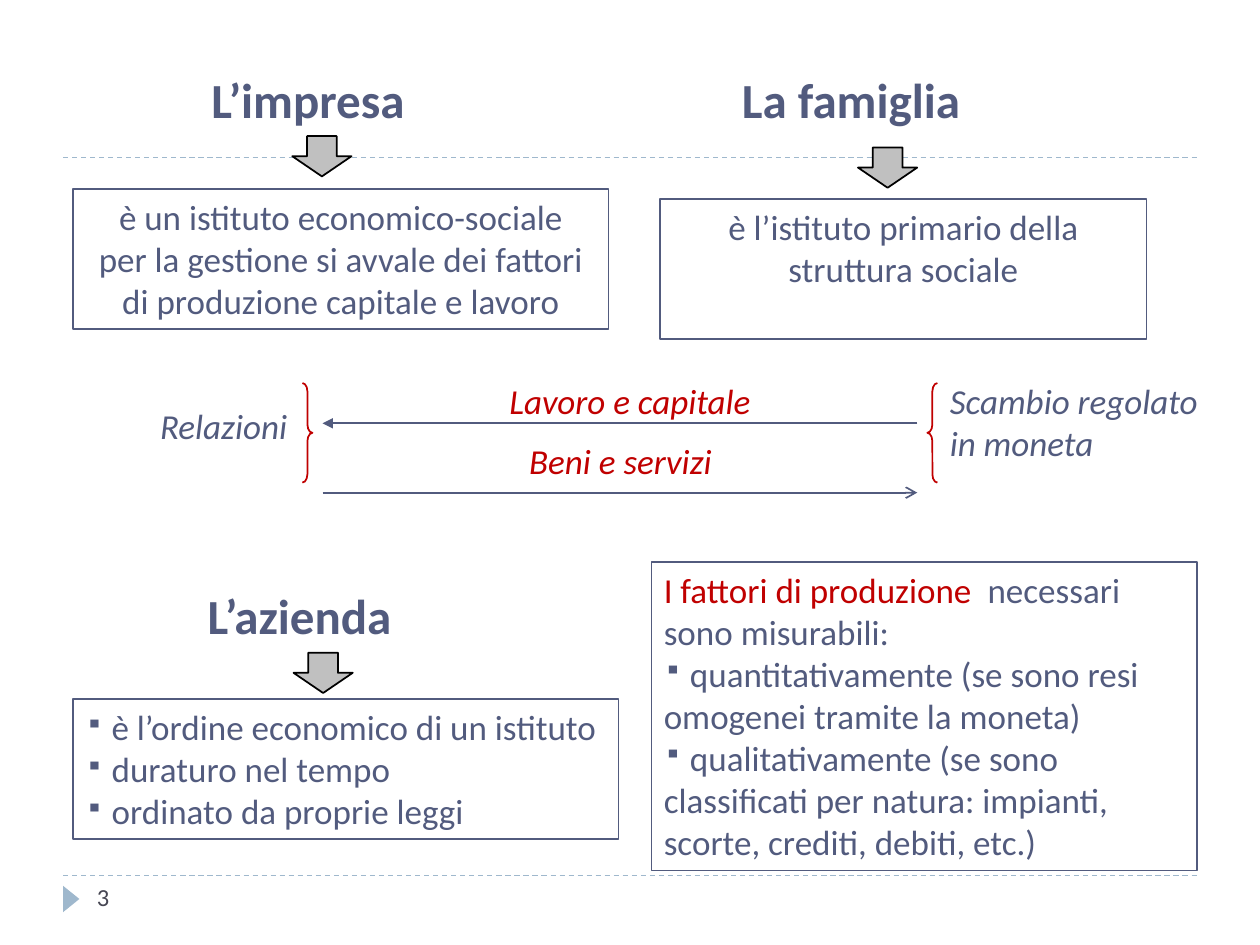
from dataclasses import dataclass

from lxml import etree
from pptx import Presentation
from pptx.dml.color import RGBColor
from pptx.enum.dml import MSO_LINE
from pptx.enum.shapes import MSO_CONNECTOR, MSO_SHAPE
from pptx.enum.text import MSO_ANCHOR, PP_ALIGN
from pptx.oxml.ns import qn
from pptx.util import Inches, Pt

RECT, DOWN_ARROW = MSO_SHAPE.RECTANGLE, MSO_SHAPE.DOWN_ARROW
LEFT_BRACE, RIGHT_BRACE = MSO_SHAPE.LEFT_BRACE, MSO_SHAPE.RIGHT_BRACE
TRIANGLE = MSO_SHAPE.ISOSCELES_TRIANGLE
STRAIGHT, DASH = MSO_CONNECTOR.STRAIGHT, MSO_LINE.DASH
LEFT, CENTER, TOP = PP_ALIGN.LEFT, PP_ALIGN.CENTER, MSO_ANCHOR.TOP
COLS, ROWS = 100, 75


@dataclass(frozen=True)
class Theme:
    font: str = "Calibri"
    ink: str = "525B7E"
    accent: str = "C00000"
    rule: str = "9FB8CD"
    gray: str = "C0C0C0"
    black: str = "000000"
    number: str = "464653"
    heading: int = 28
    body: int = 20
    small: int = 14


class SlideBuilder:
    """Draws on one slide; places are (left, top, width, height) in grid units."""

    def __init__(self, prs, theme):
        self.theme = theme
        self.slide = prs.slides.add_slide(prs.slide_layouts[6])
        self.col, self.row = prs.slide_width / COLS, prs.slide_height / ROWS

    def place(self, x, y):
        return round(x * self.col), round(y * self.row)

    def shape(self, kind, at, fill=None, line=None, adjust=None):
        sp = self.slide.shapes.add_shape(kind, *self.place(*at[:2]), *self.place(*at[2:]))
        sp.shadow.inherit = False
        if adjust is not None:
            sp.adjustments[0] = adjust
        if fill:
            sp.fill.solid()
            sp.fill.fore_color.rgb = RGBColor.from_string(fill)
        else:
            sp.fill.background()
        if line:
            sp.line.color.rgb = RGBColor.from_string(line)
            sp.line.width = Pt(1)
        else:
            sp.line.fill.background()
        return sp

    def set_text(self, sp, paragraphs, size, color, align=LEFT, bold=False, italic=False):
        """Fill a shape; a paragraph starting with a bullet sign becomes a list item,
        and one given as a tuple has its first part in the accent colour."""
        tf = sp.text_frame
        tf.word_wrap, tf.vertical_anchor = True, TOP
        for i, content in enumerate(paragraphs):
            p = tf.add_paragraph() if i else tf.paragraphs[0]
            p.alignment = align
            p.font.name, p.font.size = self.theme.font, Pt(size)
            p.font.bold, p.font.italic = bold, italic
            p.font.color.rgb = RGBColor.from_string(color)
            if isinstance(content, tuple):
                for part, part_color in zip(content, (self.theme.accent, color)):
                    r = p.add_run()
                    r.text = part
                    r.font.color.rgb = RGBColor.from_string(part_color)
            elif content.startswith("▪"):
                p.add_run().text = content[1:]
                self.bullet(p)
            else:
                p.add_run().text = content

    def bullet(self, p):
        props = p._p.get_or_add_pPr()
        size = etree.Element(qn("a:buSzPct"), val="70000")
        sign = etree.Element(qn("a:buChar"), char="▪")
        props.insert(0, size)
        props.insert(1, sign)

    def text(self, at, content, size=None, color=None, **style):
        sp = self.slide.shapes.add_textbox(*self.place(*at[:2]), *self.place(*at[2:]))
        self.set_text(sp, [content], size or self.theme.body, color or self.theme.ink, **style)

    def heading(self, at, content):
        self.text(at, content, self.theme.heading, bold=True)

    def box(self, at, paragraphs, align=LEFT):
        sp = self.shape(RECT, at, line=self.theme.ink)
        self.set_text(sp, paragraphs, self.theme.body, self.theme.ink, align)

    def down_arrow(self, x, y):
        self.shape(DOWN_ARROW, (x, y, 4.7, 3.2), self.theme.gray, self.theme.black, 0.5)

    def brace(self, kind, x):
        self.shape(kind, (x, 30.4, 0.8, 7.9), line=self.theme.accent, adjust=0.83)

    def line(self, x1, x2, y, color, width=1.0, dash=None, arrow=None):
        sp = self.slide.shapes.add_connector(
            STRAIGHT, *self.place(x1, y), *self.place(x2, y))
        sp.line.color.rgb = RGBColor.from_string(color)
        sp.line.width = Pt(width)
        if dash:
            sp.line.dash_style = dash
        if arrow:
            ln = sp._element.spPr.find(qn("a:ln"))
            etree.SubElement(ln, qn("a:tailEnd"), type=arrow)
        etree.SubElement(sp._element.spPr, qn("a:effectLst"))


def main():
    prs = Presentation()
    prs.slide_width, prs.slide_height = Inches(10), Inches(7.5)
    theme = Theme()
    s = SlideBuilder(prs, theme)

    for y in (69.5, 12.5):
        s.line(5, 95, y, theme.rule, 0.75, DASH)
    s.shape(TRIANGLE, (4.6, 70.7, 2.1, 1.3), theme.rule).rotation = 90
    s.text((6.7, 69.5, 21.7, 4), "3", theme.small, theme.number)

    s.heading((15.8, 5, 22, 5.7), "L’impresa")
    s.down_arrow(23.2, 10.8)
    s.box((5.8, 15, 42.5, 11.1), [
        "è un istituto economico-sociale",
        "per la gestione si avvale dei fattori di produzione capitale e lavoro",
    ], CENTER)

    s.heading((57.9, 5, 25.2, 5.7), "La famiglia")
    s.down_arrow(68.1, 11.7)
    s.box((52.4, 15.8, 38.6, 11.1),
          ["è l’istituto primario della struttura sociale"], CENTER)

    s.text((8.3, 31.6, 18.9, 4.3), "Relazioni", align=CENTER, italic=True)
    s.brace(RIGHT_BRACE, 24)
    s.text((37.4, 29.6, 25.2, 4.3), "Lavoro e capitale", color=theme.accent,
           align=CENTER, italic=True)
    s.line(72.8, 25.6, 33.6, theme.ink, arrow="triangle")
    s.text((39.8, 34.4, 18.9, 4.3), "Beni e servizi", color=theme.accent,
           align=CENTER, italic=True)
    s.line(25.6, 72.8, 39.1, theme.ink, arrow="arrow")
    s.brace(LEFT_BRACE, 73.6)
    s.text((74.4, 29.6, 23.6, 7.7), "Scambio regolato in moneta", italic=True)

    s.heading((15.5, 46, 22, 5.7), "L’azienda")
    s.down_arrow(23.3, 51.8)
    s.box((5.8, 55.5, 43.3, 11.1), [
        "▪ è l’ordine economico di un istituto",
        "▪ duraturo nel tempo",
        "▪ ordinato da proprie leggi",
    ])
    s.box((51.7, 44.6, 43.3, 24.5), [
        ("I fattori di produzione", "  necessari sono misurabili:"),
        "▪ quantitativamente (se sono resi omogenei tramite la moneta)",
        "▪ qualitativamente (se sono classificati per natura: impianti, "
        "scorte, crediti, debiti, etc.)",
    ])
    prs.save("out.pptx")


if __name__ == "__main__":
    main()
